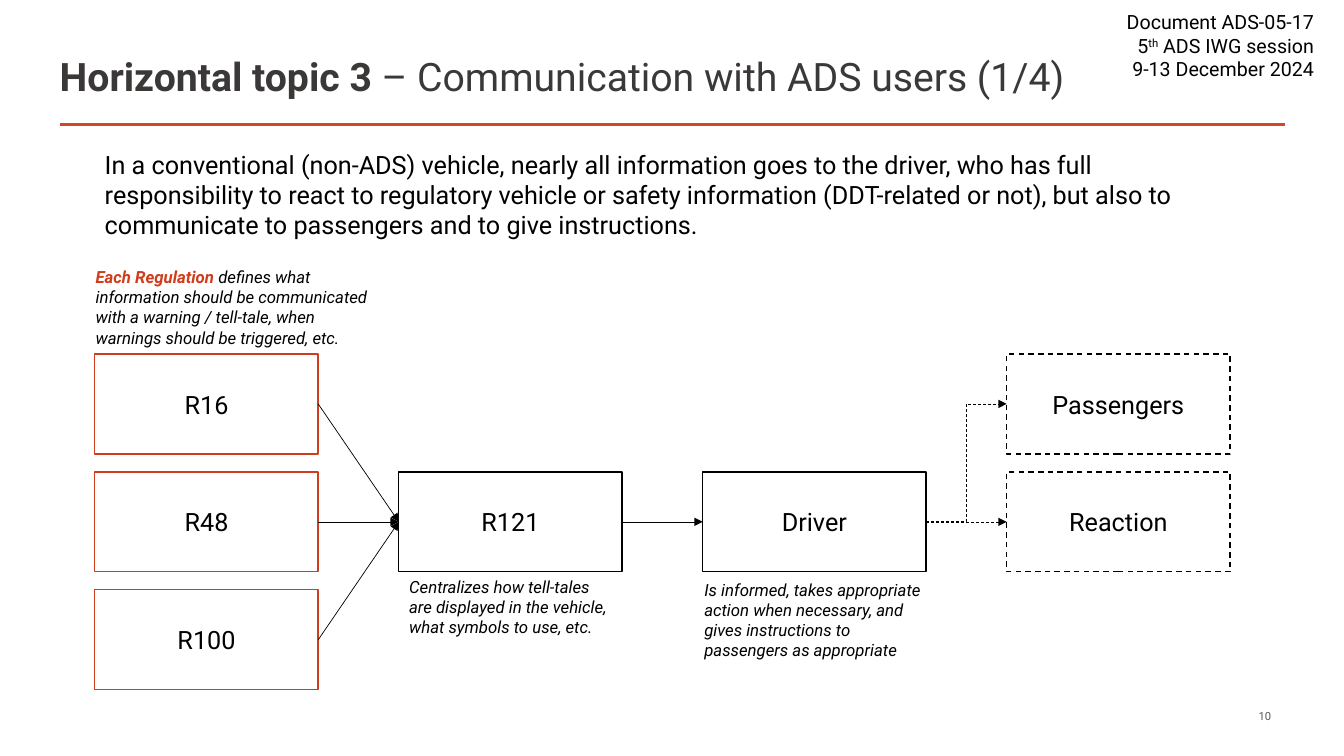
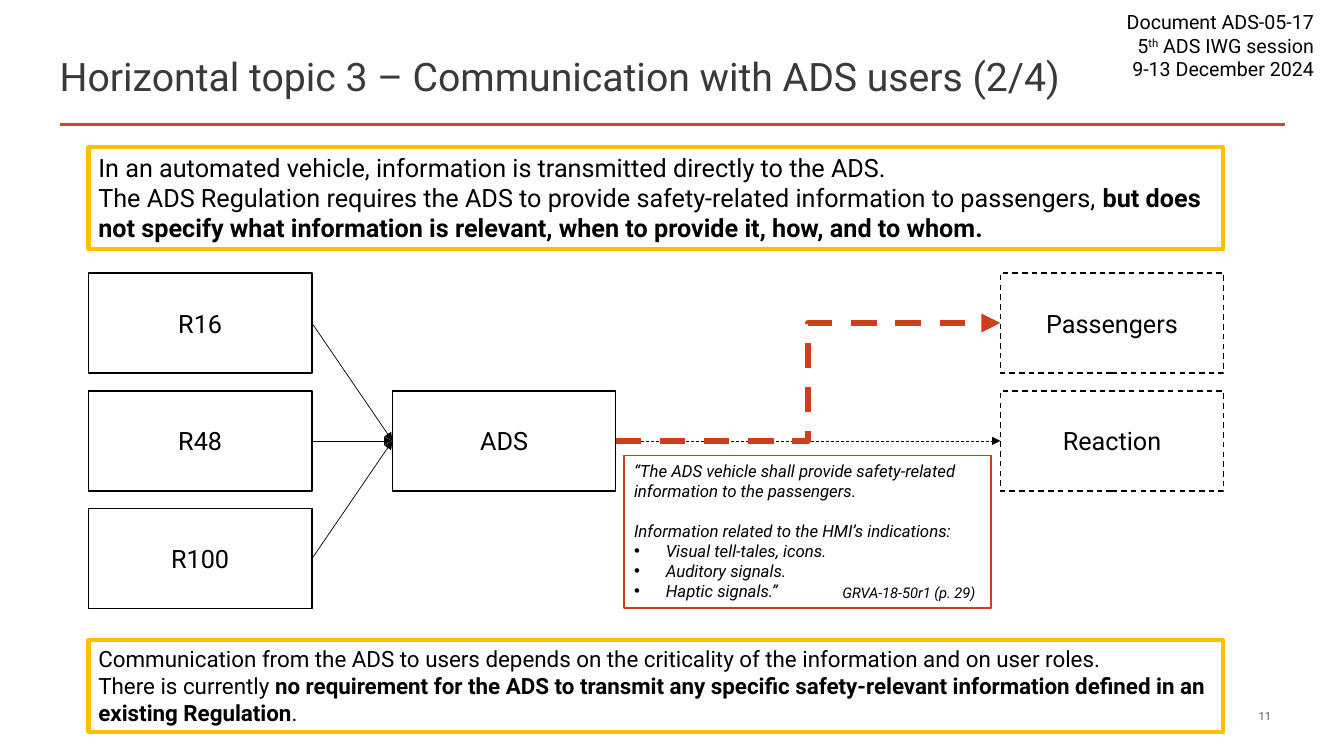
"""Build two slides on how vehicle information reaches drivers, an ADS and passengers."""
from lxml.etree import SubElement
from pptx import Presentation
from pptx.dml.color import RGBColor
from pptx.enum.dml import MSO_LINE
from pptx.enum.shapes import MSO_CONNECTOR, MSO_SHAPE
from pptx.enum.text import MSO_ANCHOR, MSO_AUTO_SIZE, PP_ALIGN
from pptx.oxml.ns import qn
from pptx.util import Cm, Pt

FONT = "Roboto"
COLORS = {
    "text": "000000",
    "title": "3B3838",
    "number": "595959",
    "rule": "D24726",
    "accent": "CF3D1C",
    "highlight": "FFC000",
}
BOX_WIDTH, BOX_HEIGHT = 5.63, 2.52
COLUMN_STEP, ROW_STEP = 7.66, 2.97
LEFT_SITE, RIGHT_SITE = 1, 3
REGULATIONS = ("R16", "R48", "R100")
OUTCOMES = ("Passengers", "Reaction")


def add_span(para, text, size=18, color="text", bold=False, italic=False, superscript=False):
    span = para.add_run()
    span.text = text
    font = span.font
    font.name, font.size = FONT, Pt(size)
    font.bold, font.italic = bold, italic
    font.color.rgb = RGBColor.from_string(COLORS[color])
    if superscript:
        font._element.set("baseline", "30000")


def add_bullet(para, indent=0.8):
    properties = para._p.get_or_add_pPr()
    properties.set("marL", str(Cm(indent)))
    properties.set("indent", str(-Cm(indent)))
    SubElement(properties, qn("a:buFont")).set("typeface", "Arial")
    SubElement(properties, qn("a:buChar")).set("char", "•")


class SlideBuilder:
    """Holds the shared style and the slide being drawn."""

    def __init__(self):
        self.deck = Presentation()
        self.deck.slide_width, self.deck.slide_height = Cm(33.87), Cm(19.05)
        self.slide = None

    def start(self, number, *title):
        layout = self.deck.slide_layouts.get_by_name("Title Only")
        self.slide = self.deck.slides.add_slide(layout)
        heading = self.slide.shapes.title
        heading.left, heading.top = Cm(1.25), Cm(1.2)
        heading.width, heading.height = Cm(31.14), Cm(1.55)
        self.fill_text(heading, [title], size=28, color="title")
        self.line((1.5, 3.13), (32.39, 3.13), color="rule", width=2, arrow=False)
        session = [
            ["Document ADS-05-17"],
            ["5", ("th", {"superscript": True}), " ADS IWG session"],
            ["9-13 December 2024"],
        ]
        self.text(27.5, 0.13, 5.87, 2.05, session, size=14, align=PP_ALIGN.RIGHT)
        self.text(23.19, 17.85, 9.1, 0.4, [[number]], size=8, color="number",
                  align=PP_ALIGN.RIGHT, anchor=MSO_ANCHOR.MIDDLE)

    def fill_text(self, shape, paragraphs, align=PP_ALIGN.LEFT, anchor=MSO_ANCHOR.TOP, **style):
        frame = shape.text_frame
        frame.word_wrap = True
        frame.auto_size = MSO_AUTO_SIZE.NONE
        frame.vertical_anchor = anchor
        for index, spans in enumerate(paragraphs):
            para = frame.add_paragraph() if index else frame.paragraphs[0]
            para.alignment = align
            for span in spans:
                text, extra = (span, {}) if isinstance(span, str) else span
                add_span(para, text, **{**style, **extra})

    def text(self, left, top, width, height, paragraphs, **style):
        box = self.slide.shapes.add_textbox(Cm(left), Cm(top), Cm(width), Cm(height))
        self.fill_text(box, paragraphs, **style)

    def panel(self, left, top, width, height, paragraphs,
              border="text", thickness=1, dashed=False, **style):
        box = self.slide.shapes.add_shape(
            MSO_SHAPE.RECTANGLE, Cm(left), Cm(top), Cm(width), Cm(height))
        box.shadow.inherit = False
        box.fill.background()
        self.outline(box.line, border, thickness, dashed)
        self.fill_text(box, paragraphs, **style)
        return box

    def stack(self, labels, left, top, **options):
        return [
            self.panel(left, top + row * ROW_STEP, BOX_WIDTH, BOX_HEIGHT, [[label]],
                       align=PP_ALIGN.CENTER, anchor=MSO_ANCHOR.MIDDLE, **options)
            for row, label in enumerate(labels)
        ]

    def flow(self, left, top, center_labels, border="text"):
        sources = self.stack(REGULATIONS, left, top, border=border)
        centers = [
            self.stack([label], left + column * COLUMN_STEP, top + ROW_STEP)[0]
            for column, label in enumerate(center_labels, 1)
        ]
        outcomes = self.stack(OUTCOMES, left + 3 * COLUMN_STEP, top, dashed=True)
        for source in sources:
            self.link(source, centers[0])
        for source, target in zip(centers, centers[1:]):
            self.link(source, target)
        self.link(centers[-1], outcomes[1], dashed=True)
        return centers[-1], outcomes[0]

    def outline(self, line, color, width, dashed):
        line.color.rgb = RGBColor.from_string(COLORS[color])
        line.width = Pt(width)
        if dashed:
            line.dash_style = MSO_LINE.DASH

    def line(self, start, end, kind=MSO_CONNECTOR.STRAIGHT,
             color="text", width=0.5, dashed=False, arrow=True):
        points = [Cm(value) for value in (*start, *end)]
        connector = self.slide.shapes.add_connector(kind, *points)
        self.outline(connector.line, color, width, dashed)
        properties = connector._element.spPr
        if arrow:
            SubElement(properties.find(qn("a:ln")), qn("a:tailEnd")).set("type", "triangle")
        SubElement(properties, qn("a:effectLst"))
        return connector

    def link(self, source, target, **options):
        connector = self.line((0, 0), (1, 1), **options)
        connector.begin_connect(source, RIGHT_SITE)
        connector.end_connect(target, LEFT_SITE)


def build_conventional(builder):
    builder.start("10", ("Horizontal topic 3", {"bold": True}),
                  " – Communication with ADS users (1/4)")
    builder.text(2.39, 3.63, 28.6, 2.57, [[
        "In a conventional (non-ADS) vehicle, nearly all information goes to the driver, "
        "who has full responsibility to react to regulatory vehicle or safety information "
        "(DDT-related or not), but also to communicate to passengers and to give instructions."
    ]])
    driver, passengers = builder.flow(2.39, 8.92, ["R121", "Driver"], border="accent")
    builder.link(driver, passengers, kind=MSO_CONNECTOR.ELBOW, dashed=True)
    captions = [
        (2.16, 6.6, 7.42, [
            ("Each Regulation ", {"bold": True, "color": "accent"}),
            "defines what information should be communicated with a warning / tell-tale, "
            "when warnings should be triggered, etc."]),
        (10.06, 14.4, 5.64, [
            "Centralizes how tell-tales are displayed in the vehicle, "
            "what symbols to use, etc."]),
        (17.5, 14.48, 6.17, [
            "Is informed, takes appropriate action when necessary, "
            "and gives instructions to passengers as appropriate"]),
    ]
    for left, top, width, spans in captions:
        builder.text(left, top, width, 2.31, [spans], size=12, italic=True)


def build_automated(builder):
    builder.start("11", "Horizontal topic 3 – Communication with ADS users (2/4)")
    bold = {"bold": True}
    builder.panel(2.23, 3.71, 28.6, 2.57, [
        ["In an automated vehicle, information is transmitted directly to the ADS."],
        ["The ADS Regulation requires the ADS to provide safety-related information "
         "to passengers, ",
         ("but does not specify what information is relevant, when to provide it, "
          "how, and to whom.", bold)],
    ], border="highlight", thickness=3)
    quote = builder.panel(15.73, 11.48, 9.25, 3.84, [
        ["“The ADS vehicle shall provide safety-related information to the passengers."],
        ["Information related to the HMI’s indications:"],
        ["Visual tell-tales, icons."],
        ["Auditory signals."],
        ["Haptic signals.”"],
    ], border="accent", size=12, italic=True)
    introduction, *signals = quote.text_frame.paragraphs[1:]
    introduction.space_before = Pt(14)
    for para in signals:
        add_bullet(para)
    builder.text(20.98, 14.58, 4.45, 0.74, [["GRVA-18-50r1 (p. 29)"]], size=10.5, italic=True)
    automation, passengers = builder.flow(2.23, 6.88, ["ADS"])
    builder.panel(2.23, 16.13, 28.6, 2.31, [
        ["Communication from the ADS to users depends on the criticality of the "
         "information and on user roles."],
        ["There is currently ",
         ("no requirement for the ADS to transmit any specific safety-relevant "
          "information defined in an existing Regulation", bold), "."],
    ], border="highlight", thickness=3, size=16)
    builder.link(automation, passengers, kind=MSO_CONNECTOR.ELBOW,
                 color="accent", width=4.5, dashed=True)


def main():
    builder = SlideBuilder()
    build_conventional(builder)
    build_automated(builder)
    builder.deck.save("out.pptx")


if __name__ == "__main__":
    main()
